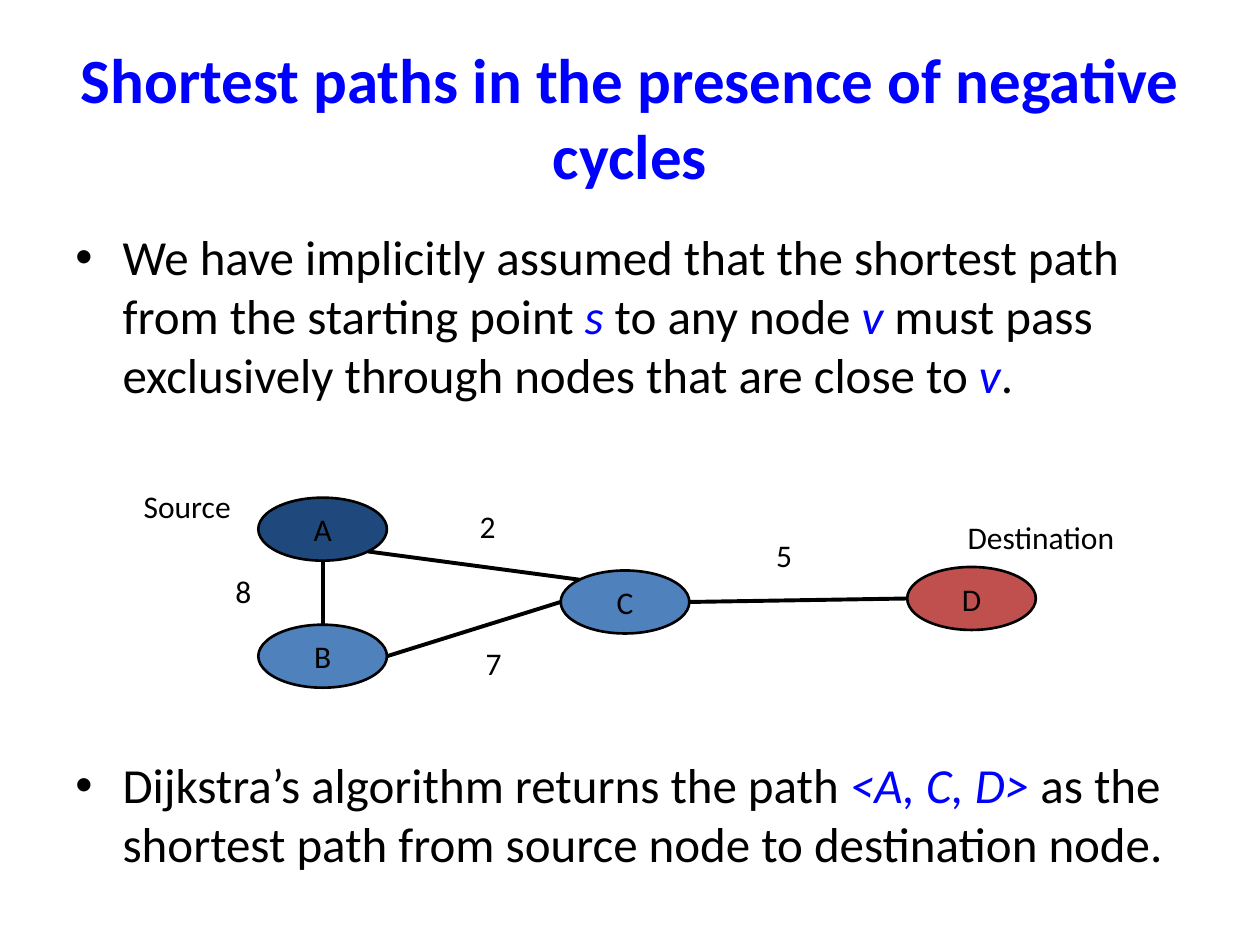
from math import cos, radians, sin

from lxml.etree import SubElement
from pptx import Presentation
from pptx.dml.color import RGBColor
from pptx.enum.shapes import MSO_CONNECTOR, MSO_SHAPE
from pptx.enum.text import MSO_ANCHOR, PP_ALIGN
from pptx.oxml.ns import qn
from pptx.util import Pt

BLACK, BLUE = "000000", "0000FF"
SOURCE_FILL, NODE_FILL, TARGET_FILL = "1F497D", "4F81BD", "C0504D"


def color(value):
    return RGBColor.from_string(value)


class GraphSlide:
    font = "Calibri"
    label_size = 18
    node_width, node_height = 73.5, 36
    bullet_indent = 27

    def __init__(self, slide):
        self.slide = slide

    def style(self, paragraph, size, hue=BLACK, bold=False):
        paragraph.font.name = self.font
        paragraph.font.size = Pt(size)
        paragraph.font.bold = bold
        paragraph.font.color.rgb = color(hue)

    def frame(self, left, top, width, height, wrap=True):
        box = self.slide.shapes.add_textbox(Pt(left), Pt(top), Pt(width), Pt(height))
        box.text_frame.word_wrap = wrap
        return box.text_frame

    def title(self, text, *bounds):
        heading = self.frame(*bounds)
        heading.vertical_anchor = MSO_ANCHOR.MIDDLE
        heading.text = text
        paragraph = heading.paragraphs[0]
        paragraph.alignment = PP_ALIGN.CENTER
        self.style(paragraph, 36, BLUE, bold=True)

    def bullets(self, items, *bounds):
        body = self.frame(*bounds)
        for index, (space_before, pieces) in enumerate(items):
            paragraph = body.add_paragraph() if index else body.paragraphs[0]
            paragraph.space_before = Pt(space_before)
            self.style(paragraph, 28)
            properties = paragraph._p.get_or_add_pPr()
            properties.set("marL", str(Pt(self.bullet_indent)))
            properties.set("indent", str(-Pt(self.bullet_indent)))
            mark_font = SubElement(properties, qn("a:buFont"))
            mark_font.set("typeface", "Arial")
            SubElement(properties, qn("a:buChar")).set("char", "•")
            properties.append(properties.find(qn("a:defRPr")))
            for position, piece in enumerate(pieces):
                run = paragraph.add_run()
                run.text = piece
                emphasized = position % 2 == 1
                run.font.italic = emphasized
                run.font.color.rgb = color(BLUE if emphasized else BLACK)

    def node(self, name, left, top, fill):
        ellipse = self.slide.shapes.add_shape(
            MSO_SHAPE.OVAL, Pt(left), Pt(top), Pt(self.node_width), Pt(self.node_height)
        )
        ellipse.shadow.inherit = False
        ellipse.fill.solid()
        ellipse.fill.fore_color.rgb = color(fill)
        ellipse.line.color.rgb = color(BLACK)
        ellipse.line.width = Pt(1.5)
        ellipse.text_frame.word_wrap = False
        ellipse.text_frame.vertical_anchor = MSO_ANCHOR.MIDDLE
        ellipse.text_frame.text = name
        paragraph = ellipse.text_frame.paragraphs[0]
        paragraph.alignment = PP_ALIGN.CENTER
        self.style(paragraph, self.label_size)
        return ellipse

    def rim(self, node, degrees):
        x = node.left + node.width / 2 * (1 + cos(radians(degrees)))
        y = node.top + node.height / 2 * (1 + sin(radians(degrees)))
        return round(x), round(y)

    def edge(self, start, start_angle, end, end_angle):
        line = self.slide.shapes.add_connector(
            MSO_CONNECTOR.STRAIGHT, *self.rim(start, start_angle), *self.rim(end, end_angle)
        )
        line.line.color.rgb = color(BLACK)
        line.line.width = Pt(2.25)
        SubElement(line._element.spPr, qn("a:effectLst"))

    def label(self, text, left, top, width=24.5):
        caption = self.frame(left, top, width, 29, wrap=False)
        caption.text = text
        self.style(caption.paragraphs[0], self.label_size)


def main():
    presentation = Presentation()
    presentation.slide_width, presentation.slide_height = Pt(720), Pt(540)
    page = GraphSlide(presentation.slides.add_slide(presentation.slide_layouts[6]))

    page.title("Shortest paths in the presence of negative cycles", 36, 21.6, 648, 90)
    page.bullets(
        [
            (5.6, [
                "We have implicitly assumed that the shortest path from the starting point ",
                "s", " to any node ", "v",
                " must pass exclusively through nodes that are close to ", "v", ".",
            ]),
            (201, [
                "Dijkstra’s algorithm returns the path ", "<A, C, D> ",
                "as the shortest path from source node to destination node.",
            ]),
        ],
        36, 126, 648, 356.4,
    )

    places = {
        "D": (518.4, 324, TARGET_FILL),
        "A": (147.6, 284.4, SOURCE_FILL),
        "B": (147.6, 357, NODE_FILL),
        "C": (320.4, 326, NODE_FILL),
    }
    nodes = {name: page.node(name, *place) for name, place in places.items()}

    for start, start_angle, end, end_angle in [
        ("C", 225, "A", 45),
        ("B", 270, "A", 90),
        ("D", 180, "C", 0),
        ("C", 180, "B", 0),
    ]:
        page.edge(nodes[start], start_angle, nodes[end], end_angle)

    for weight, left, top in [
        ("2", 267, 286), ("7", 270.5, 364.5), ("5", 436.5, 302.5), ("8", 127.5, 323.5),
    ]:
        page.label(weight, left, top)
    page.label("Source", 75, 274.5, 65)
    page.label("Destination", 545.8, 292.5, 99.4)

    presentation.save("out.pptx")


if __name__ == "__main__":
    main()
